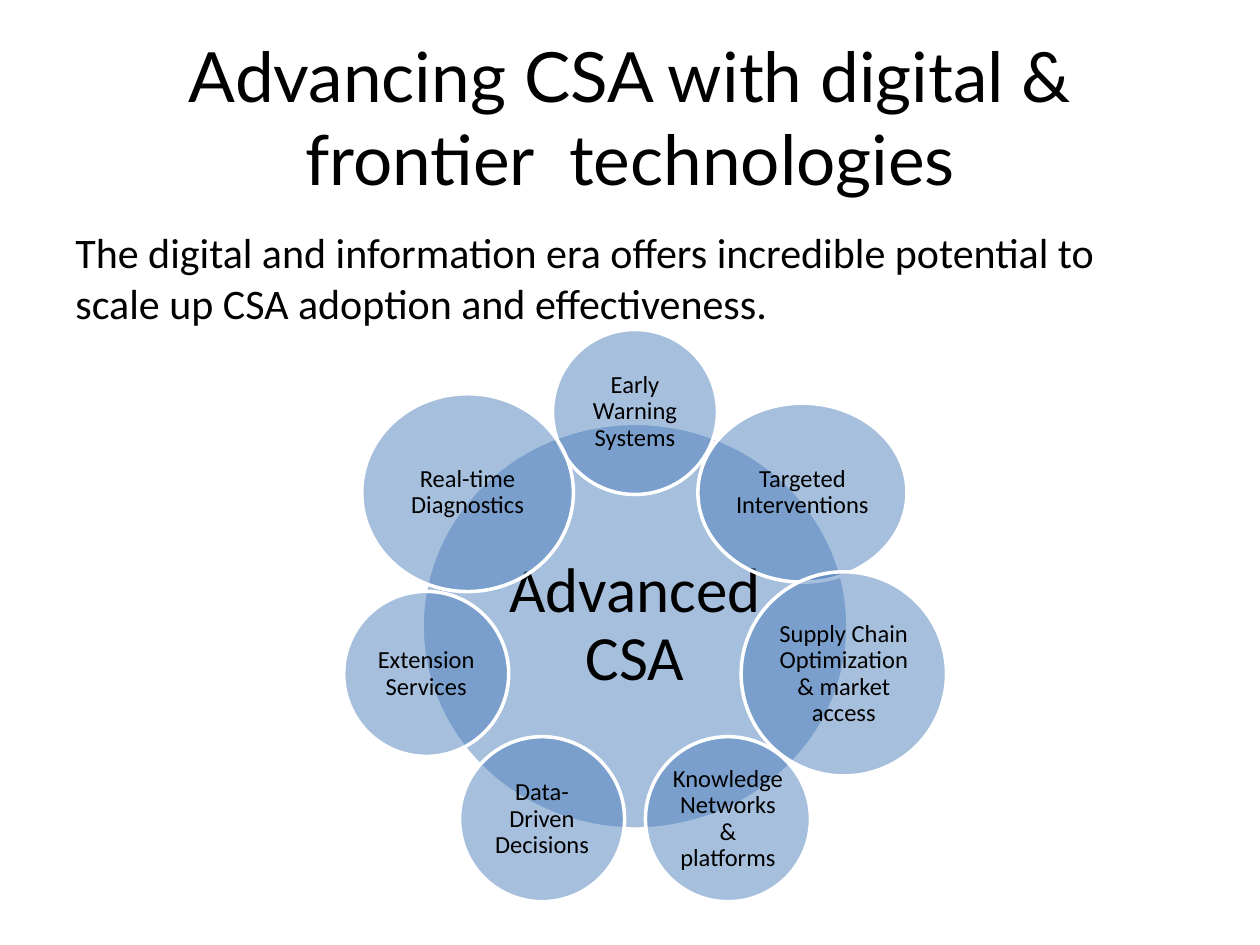
import math

from lxml import etree
from pptx import Presentation
from pptx.dml.color import RGBColor
from pptx.enum.shapes import MSO_SHAPE
from pptx.enum.text import MSO_ANCHOR, MSO_AUTO_SIZE, PP_ALIGN
from pptx.oxml.ns import qn
from pptx.util import Inches, Pt

ELLIPSE = MSO_SHAPE.OVAL
TOP, MIDDLE = MSO_ANCHOR.TOP, MSO_ANCHOR.MIDDLE
LEFT, CENTER = PP_ALIGN.LEFT, PP_ALIGN.CENTER
TITLE_ONLY = 5

# Content
TITLE = "Advancing CSA with digital & frontier  technologies"
INTRO = ("The digital and information era offers incredible potential to "
         "scale up CSA adoption and effectiveness.")
HUB = ("Advanced CSA", 3.38, 3.22)
# Label, width and height of each circle, clockwise from the top
RING = [
    ("Early Warning Systems", 1.31, 1.31),
    ("Targeted Interventions", 1.66, 1.42),
    ("Supply Chain Optimization & market access", 1.63, 1.62),
    ("Knowledge Networks & platforms", 1.31, 1.31),
    ("Data-Driven Decisions", 1.31, 1.31),
    ("Extension Services", 1.31, 1.31),
    ("Real-time Diagnostics", 1.68, 1.57),
]

COLORS = {"text": "000000", "circle": "4F81BD", "outline": "FFFFFF"}
CENTER_X, CENTER_Y, RADIUS = 5.04, 4.97, 1.7
OPACITY = 50


def write_text(shape, text, size, font="Calibri", align=CENTER, anchor=MIDDLE,
               line_spacing=None, inset=None):
    frame = shape.text_frame
    frame.word_wrap = True
    frame.auto_size = MSO_AUTO_SIZE.NONE
    frame.vertical_anchor = anchor
    if inset is not None:
        frame.margin_left = frame.margin_right = Inches(inset)
        frame.margin_top = frame.margin_bottom = Inches(inset)
    paragraph = frame.paragraphs[0]
    paragraph.alignment = align
    paragraph.line_spacing = line_spacing
    run = paragraph.add_run()
    run.text = text
    run.font.name = font
    run.font.size = Pt(size)
    run.font.color.rgb = RGBColor.from_string(COLORS["text"])


def add_circle(shapes, label, center_x, center_y, width, height, size, inset):
    circle = shapes.add_shape(
        ELLIPSE, Inches(center_x - width / 2), Inches(center_y - height / 2),
        Inches(width), Inches(height))
    circle.shadow.inherit = False
    circle.fill.solid()
    circle.fill.fore_color.rgb = RGBColor.from_string(COLORS["circle"])
    color = circle.fill._xPr.find(qn("a:solidFill"))[0]
    etree.SubElement(color, qn("a:alpha")).set("val", str(OPACITY * 1000))
    circle.line.color.rgb = RGBColor.from_string(COLORS["outline"])
    circle.line.width = Pt(2)
    write_text(circle, label, size, line_spacing=0.9, inset=inset)


def main():
    presentation = Presentation()
    presentation.slide_width = Inches(10)
    presentation.slide_height = Inches(7.5)
    slide = presentation.slides.add_slide(presentation.slide_layouts[TITLE_ONLY])

    # Title and introduction
    title = slide.shapes.title
    title.left, title.top = Inches(0.5), Inches(0.3)
    title.width, title.height = Inches(9), Inches(1.25)
    write_text(title, TITLE, 39.6, font="Lato")
    intro = slide.shapes.add_textbox(Inches(0.5), Inches(1.75), Inches(9), Inches(4.95))
    write_text(intro, INTRO, 24, align=LEFT, anchor=TOP)

    # Hub with circles at equal angles around it
    diagram = slide.shapes.add_group_shape().shapes
    label, width, height = HUB
    add_circle(diagram, label, CENTER_X, CENTER_Y, width, height, 36, 0.05)
    for index, (label, width, height) in enumerate(RING):
        angle = 2 * math.pi * index / len(RING)
        add_circle(diagram, label, CENTER_X + RADIUS * math.sin(angle),
                   CENTER_Y - RADIUS * math.cos(angle), width, height, 14, 0.02)

    presentation.save("out.pptx")


if __name__ == "__main__":
    main()
